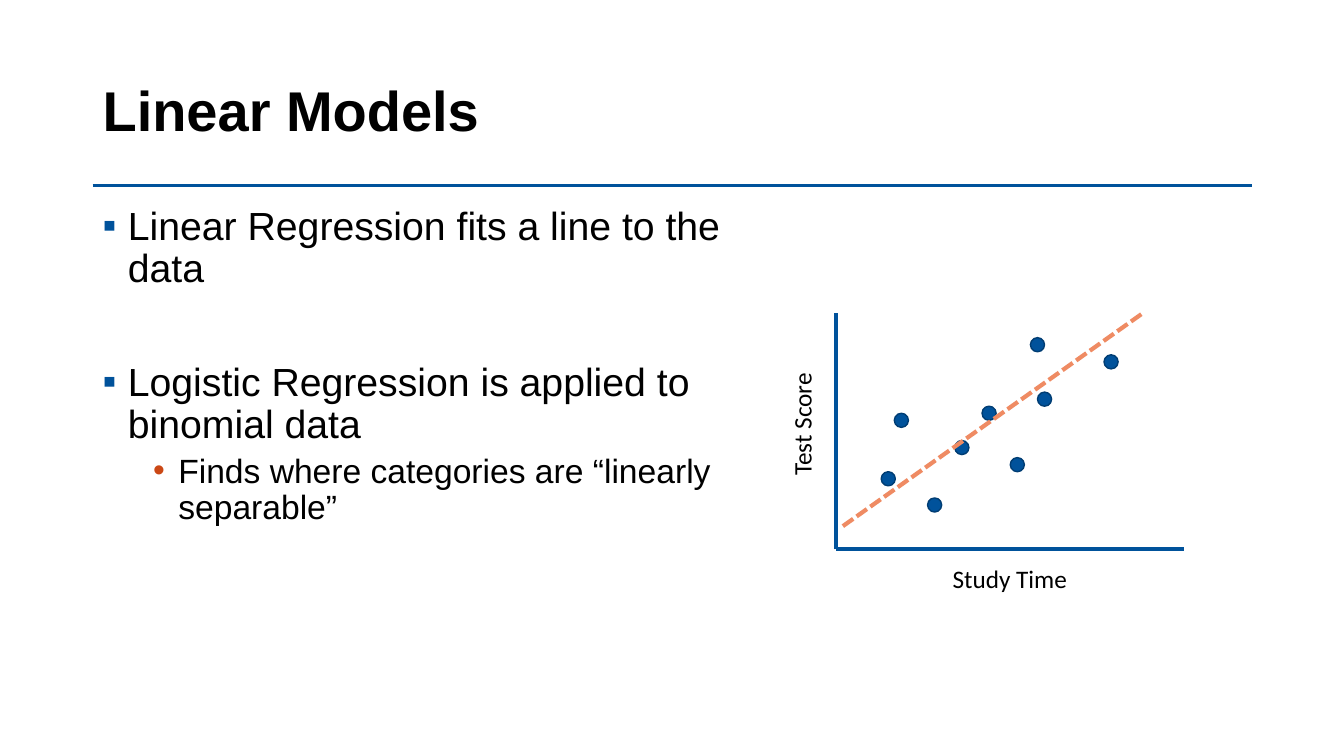
from dataclasses import dataclass

from pptx import Presentation
from pptx.dml.color import RGBColor
from pptx.enum import dml, shapes, text
from pptx.oxml import ns
from pptx.util import Inches, Pt
from lxml import etree

TITLE = "Linear Models"
# wording, outline level, space before in points
BULLETS = [
    ("Linear Regression fits a line to the data", 0, 0),
    ("Logistic Regression is applied to binomial data", 0, 51),
    ("Finds where categories are “linearly separable”", 1, 5),
]
X_LABEL, Y_LABEL = "Study Time", "Test Score"
# (study time, test score), in inches from the origin of the plot
STUDENTS = [(0.52, 0.70), (0.65, 1.28), (0.98, 0.44), (1.52, 1.35), (1.80, 0.84),
            (2.07, 1.49), (2.00, 2.03), (1.25, 1.01), (2.73, 1.86)]
TREND = [(0.07, 0.23), (3.04, 2.34)]


@dataclass(frozen=True)
class Theme:
    blue: str = "00529B"
    dark_blue: str = "003D73"
    orange: str = "EF8B63"
    black: str = "000000"
    heading_font: str = "Arial"
    label_font: str = "Calibri"
    title_size: int = 40
    label_size: int = 18
    # by outline level: size, bullet, bullet colour, text indent in inches
    levels: tuple = ((28, "▪", "00529B", 0.25), (24, "•", "CB4815", 0.75))


THEME = Theme()
WIDTH, HEIGHT = 13.33, 7.5
MARGIN, CONTENT_WIDTH = 0.92, 11.5
RULE_Y = 1.84
HANGING = 0.25
ORIGIN_X, ORIGIN_Y = 8.29, 5.45
X_LENGTH, Y_LENGTH = 3.45, 2.34
DOT = 0.14


def plot_point(time, score):
    """Turn plot coordinates into slide coordinates."""
    return ORIGIN_X + time, ORIGIN_Y - score


def add_line(slide, start, end, color, width, dash=None):
    line = slide.shapes.add_connector(
        shapes.MSO_CONNECTOR.STRAIGHT, *(Inches(v) for v in (*start, *end)))
    line.line.color.rgb = RGBColor.from_string(color)
    line.line.width = Pt(width)
    if dash is not None:
        line.line.dash_style = dash
    etree.SubElement(line._element.spPr, ns.qn("a:effectLst"))


def add_frame(slide, left, top, width, height, wrap=True):
    box = slide.shapes.add_textbox(*(Inches(v) for v in (left, top, width, height)))
    box.text_frame.word_wrap = wrap
    return box


def set_font(paragraph, name, size, bold=False):
    paragraph.font.name = name
    paragraph.font.size = Pt(size)
    paragraph.font.bold = bold
    paragraph.font.color.rgb = RGBColor.from_string(THEME.black)


def set_bullet(paragraph, mark, color, indent):
    props = paragraph._p.get_or_add_pPr()
    props.set("marL", str(Inches(indent)))
    props.set("indent", str(-Inches(HANGING)))
    bullet_color = etree.SubElement(props, ns.qn("a:buClr"))
    etree.SubElement(bullet_color, ns.qn("a:srgbClr"), val=color)
    etree.SubElement(props, ns.qn("a:buFont"), typeface=THEME.heading_font)
    etree.SubElement(props, ns.qn("a:buChar"), char=mark)


def add_title(slide):
    frame = add_frame(slide, MARGIN, 0.4, CONTENT_WIDTH, 1.45).text_frame
    frame.vertical_anchor = text.MSO_ANCHOR.MIDDLE
    heading = frame.paragraphs[0]
    heading.text = TITLE
    heading.line_spacing = 0.9
    set_font(heading, THEME.heading_font, THEME.title_size, bold=True)
    add_line(slide, (MARGIN, RULE_Y), (MARGIN + CONTENT_WIDTH, RULE_Y), THEME.blue, 2)


def add_bullets(slide):
    frame = add_frame(slide, MARGIN, 2, 6.71, 4.4).text_frame
    for i, (wording, level, space) in enumerate(BULLETS):
        bullet = frame.add_paragraph() if i else frame.paragraphs[0]
        size, mark, color, indent = THEME.levels[level]
        bullet.text = wording
        bullet.level = level
        bullet.line_spacing = 0.9
        bullet.space_before = Pt(space)
        set_bullet(bullet, mark, color, indent)
        set_font(bullet, THEME.heading_font, size)


def add_axis_label(slide, wording, center_x, center_y, width, rotation=0):
    height = 0.4
    box = add_frame(slide, center_x - width / 2, center_y - height / 2,
                    width, height, wrap=False)
    box.rotation = rotation
    label = box.text_frame.paragraphs[0]
    label.text = wording
    label.alignment = text.PP_ALIGN.CENTER
    set_font(label, THEME.label_font, THEME.label_size)


def add_student(slide, time, score):
    x, y = plot_point(time, score)
    dot = slide.shapes.add_shape(
        shapes.MSO_SHAPE.OVAL, Inches(x - DOT / 2), Inches(y - DOT / 2),
        Inches(DOT), Inches(DOT))
    dot.shadow.inherit = False
    dot.fill.solid()
    dot.fill.fore_color.rgb = RGBColor.from_string(THEME.blue)
    dot.line.color.rgb = RGBColor.from_string(THEME.dark_blue)
    dot.line.width = Pt(1)


def add_plot(slide):
    for axis_end in ((0, Y_LENGTH), (X_LENGTH, 0)):
        add_line(slide, plot_point(0, 0), plot_point(*axis_end), THEME.blue, 3)
    add_axis_label(slide, X_LABEL, *plot_point(X_LENGTH / 2, -0.29), 1.35)
    add_axis_label(slide, Y_LABEL, *plot_point(-0.34, 1.24), 1.23, rotation=270)
    for student in STUDENTS:
        add_student(slide, *student)
    start, end = (plot_point(*point) for point in TREND)
    add_line(slide, start, end, THEME.orange, 3, dml.MSO_LINE.SQUARE_DOT)


def main():
    deck = Presentation()
    deck.slide_width, deck.slide_height = Inches(WIDTH), Inches(HEIGHT)
    slide = deck.slides.add_slide(deck.slide_layouts[6])
    add_title(slide)
    add_bullets(slide)
    add_plot(slide)
    deck.save("out.pptx")


if __name__ == "__main__":
    main()
